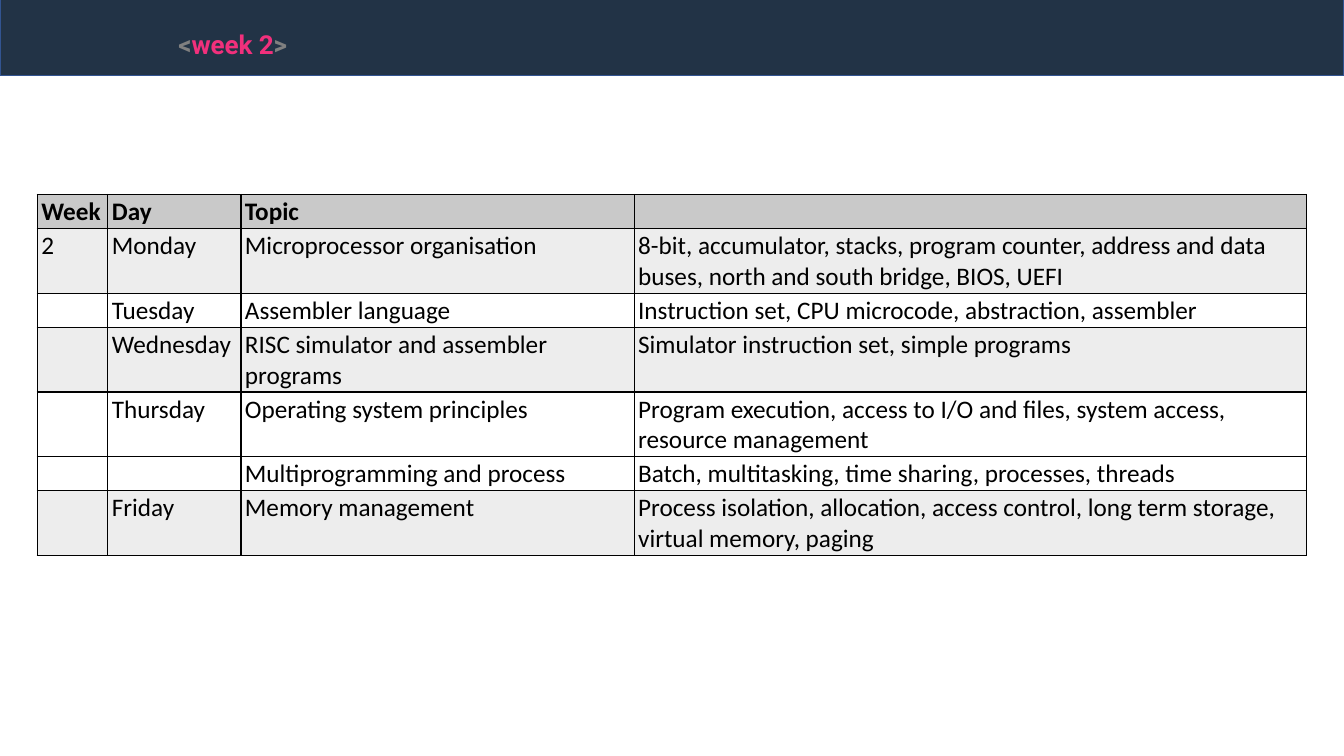
from lxml.etree import SubElement
from pptx import Presentation
from pptx.dml.color import RGBColor
from pptx.enum.shapes import MSO_SHAPE
from pptx.enum.text import MSO_ANCHOR, MSO_AUTO_SIZE, PP_ALIGN
from pptx.oxml.ns import qn
from pptx.util import Inches, Pt

COLUMN_WIDTHS = [0.7, 1.32, 3.9, 6.67]
ROW_HEIGHT = 0.24
HEADER_FILL = "C9C9C9"
BAND_FILL = "EDEDED"
SCHEDULE = [
    (HEADER_FILL, "Week", "Day", "Topic", ""),
    (BAND_FILL, "2", "Monday", "Microprocessor organisation",
     "8-bit, accumulator, stacks, program counter, address and data buses, "
     "north and south bridge, BIOS, UEFI"),
    (None, "", "Tuesday", "Assembler language",
     "Instruction set, CPU microcode, abstraction, assembler"),
    (BAND_FILL, "", "Wednesday", "RISC simulator and assembler programs",
     "Simulator instruction set, simple programs"),
    (None, "", "Thursday", "Operating system principles",
     "Program execution, access to I/O and files, system access, "
     "resource management"),
    (None, "", "", "Multiprogramming and process",
     "Batch, multitasking, time sharing, processes, threads"),
    (BAND_FILL, "", "Friday", "Memory management",
     "Process isolation, allocation, access control, long term storage, "
     "virtual memory, paging"),
]


def color(value):
    """Turn a hex string into a colour."""
    return RGBColor.from_string(value)


def add_run(paragraph, text, font_name, size, value, bold):
    """Add one formatted run to a paragraph."""
    run = paragraph.add_run()
    run.text = text
    run.font.name = font_name
    run.font.size = Pt(size)
    run.font.bold = bold
    run.font.color.rgb = color(value)
    return run


def add_banner(slide, left, top, width, height):
    """Place the dark bar behind everything else."""
    banner = slide.shapes.add_shape(
        MSO_SHAPE.RECTANGLE, Inches(left), Inches(top), Inches(width), Inches(height))
    banner.shadow.inherit = False
    banner.fill.solid()
    banner.fill.fore_color.rgb = color("223346")
    banner.line.color.rgb = color("325491")
    banner.line.width = Pt(1)
    slide.shapes.title._element.addprevious(banner._element)


def fill_title(slide, left, top, width, height):
    """Move the title placeholder and write the raised week tag."""
    title = slide.shapes.title
    title.left, title.top = Inches(left), Inches(top)
    title.width, title.height = Inches(width), Inches(height)
    frame = title.text_frame
    frame.word_wrap = False
    frame.auto_size = MSO_AUTO_SIZE.SHAPE_TO_FIT_TEXT
    frame.vertical_anchor = MSO_ANCHOR.TOP
    paragraph = frame.paragraphs[0]
    paragraph.alignment = PP_ALIGN.LEFT
    for text, value in [("<", "808080"), ("week 2", "F1307C"), (">", "808080")]:
        run = add_run(paragraph, text, "Roboto", 32, value, True)
        run.font._element.set("baseline", "30000")


def add_borders(cell):
    """Draw a thin black line on all four sides of a cell."""
    properties = cell._tc.get_or_add_tcPr()
    for side in ("a:lnL", "a:lnR", "a:lnT", "a:lnB"):
        line = SubElement(properties, qn(side), w=str(Pt(1)))
        fill = SubElement(line, qn("a:solidFill"))
        SubElement(fill, qn("a:srgbClr"), val="000000")


def fill_cell(cell, text, fill, bold):
    """Set the margins, borders, fill and text of one cell."""
    cell.margin_left = cell.margin_right = Inches(0.04)
    cell.margin_top = cell.margin_bottom = Inches(0.02)
    add_borders(cell)
    if fill:
        cell.fill.solid()
        cell.fill.fore_color.rgb = color(fill)
    else:
        cell.fill.background()
    paragraph = cell.text_frame.paragraphs[0]
    if text:
        add_run(paragraph, text, "Calibri", 18, "000000", bold)
    else:
        paragraph.font.size = Pt(18)


def add_schedule(slide, left, top):
    """Place the week's schedule table at the given corner."""
    frame = slide.shapes.add_table(
        len(SCHEDULE), len(COLUMN_WIDTHS), Inches(left), Inches(top),
        Inches(sum(COLUMN_WIDTHS)), Inches(ROW_HEIGHT * len(SCHEDULE)))
    table = frame.table
    table.horz_banding = False
    for column, width in zip(table.columns, COLUMN_WIDTHS):
        column.width = Inches(width)
    for row, (fill, *texts) in zip(table.rows, SCHEDULE):
        row.height = Inches(ROW_HEIGHT)
        for cell, text in zip(row.cells, texts):
            fill_cell(cell, text, fill, fill == HEADER_FILL)


def main():
    """Build the week 2 slide and save it."""
    presentation = Presentation()
    presentation.slide_width = Inches(13.33)
    presentation.slide_height = Inches(7.5)
    slide = presentation.slides.add_slide(presentation.slide_layouts[5])
    add_banner(slide, 0, -0.03, 13.33, 0.78)
    fill_title(slide, 1.67, 0.18, 1.39, 0.64)
    add_schedule(slide, 0.37, 1.93)
    presentation.save("out.pptx")


if __name__ == "__main__":
    main()
